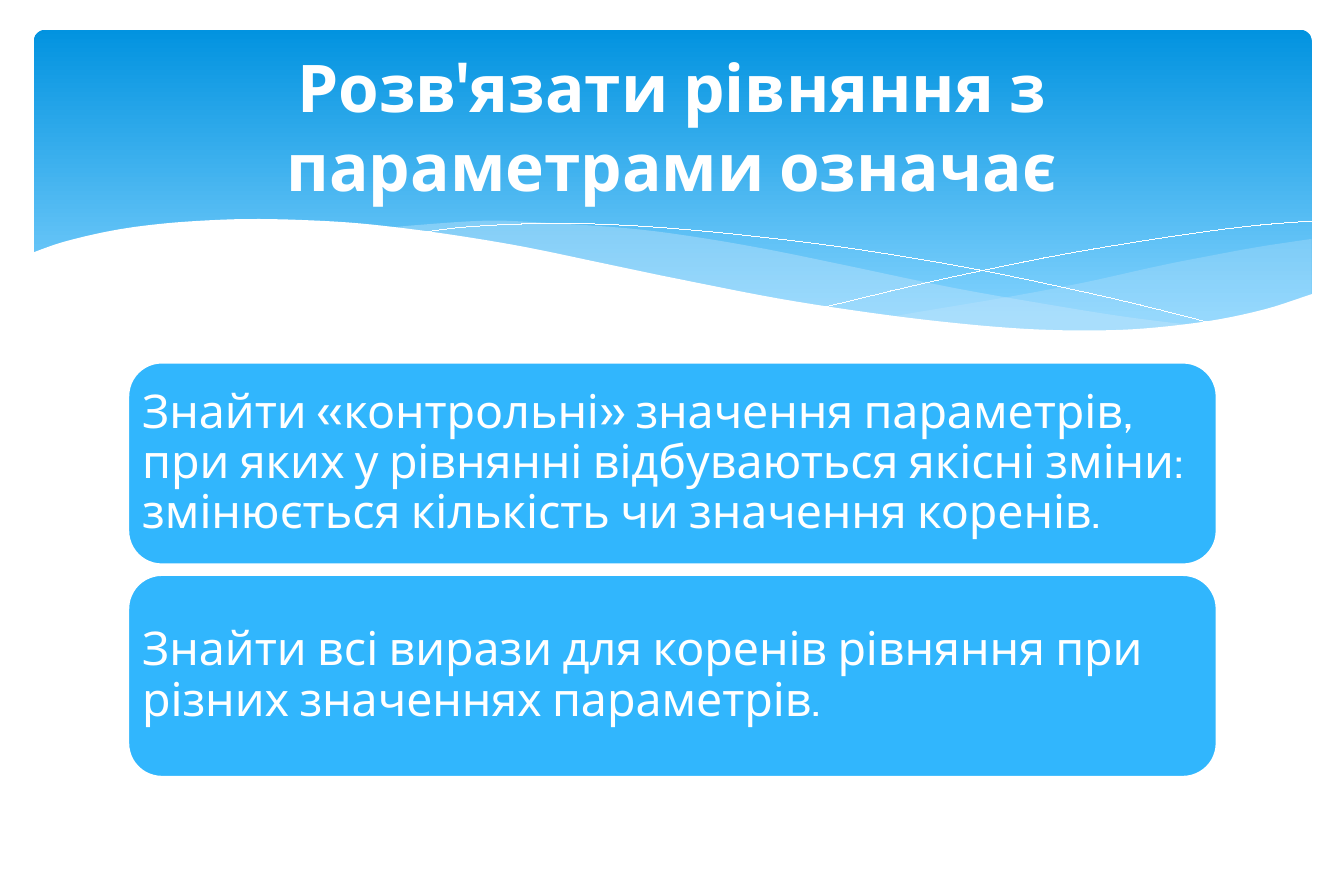
"""Build a slide with a waved title band and two statement cards."""
from lxml import etree
from pptx import Presentation
from pptx import util as u
from pptx.dml import color
from pptx.enum import shapes, text
from pptx.oxml import ns

Pt = u.Pt
COLOURS = {"sky": "0293E0", "pale": "83D3FE", "mist": "C6E7FC", "card": "31B6FD", "white": "FFFFFF"}
FONT = "Cabin"
TITLE = "Розв'язати рівняння з параметрами означає"
STATEMENTS = [
    "Знайти «контрольні» значення параметрів, при яких у рівнянні відбуваються якісні зміни: "
    "змінюється кількість чи значення коренів.",
    "Знайти всі вирази для коренів рівняння при різних значеннях параметрів.",
]

RIGHT_SWELL = [
    [(770, 126), (737, 131), (702, 137.5), (677, 142.5), (632, 152.5), (590, 160.5), (551.5, 167),
     (515.5, 173)],
    [(515.5, 173), (551, 177), (583, 180), (631, 182), (664, 181.5), (700, 178), (726, 173), (749, 167),
     (770, 160)],
]
LEFT_SWELL = [
    [(702.5, 178.5), (658, 173), (608, 165), (551.5, 155), (489.5, 142), (440.5, 132), (396.5, 124.5),
     (356.5, 119.5), (303, 116), (272, 115), (233, 117.5), (211.5, 119.5)],
    [(211.5, 119.5), (257, 125.5), (290, 131), (344, 142), (409, 155), (466.5, 165.5), (519, 173.5),
     (565, 179), (605.5, 181.5), (642, 182), (674.5, 181.5), (702.5, 178.5)],
]
FALLING_LINE = [
    [(230.5, 122.5), (258, 119), (294, 117), (330.5, 116.8), (376, 119), (430.5, 124), (494.5, 132),
     (569, 144.5), (653, 162.5), (715, 178)],
]
RISING_LINE = [
    [(476.5, 167), (543, 151.2), (608.5, 137.5), (657.5, 128.9), (705, 121.7), (739.5, 117.6),
     (769.7, 115.2)],
]
WHITE_WAVE = [
    [(771, 159), (741.5, 168.5), (708, 175.5), (669, 180), (635, 181.2), (597, 180.2), (553, 176.5),
     (504, 170.5), (449, 162), (387.5, 150), (342, 140.5), (296.5, 131), (255, 124), (216.5, 118.8),
     (182, 115.6), (136, 114), (98, 115.2), (66, 118.1), (41, 122.2), (16.5, 128.2), (-1.4, 134.5)],
    [(-1.4, 219), (771, 219)],
]


def rgb(name):
    """Return the named colour."""
    return color.RGBColor.from_string(COLOURS[name])


def apply(target, formats):
    """Set each format value on the target."""
    for name, value in formats.items():
        setattr(target, name, value)


def mirror(end, inner):
    """Return the inner knot reflected through the end knot."""
    return tuple(2 * a - b for a, b in zip(end, inner))


def smooth(knots, steps=5):
    """Return points on a smooth curve through the knots."""
    padded = [mirror(knots[0], knots[1]), *knots, mirror(knots[-1], knots[-2])]
    points = [knots[0]]
    for before, start, end, after in zip(padded, padded[1:], padded[2:], padded[3:]):
        for step in range(1, steps + 1):
            t = step / steps
            points.append(tuple(
                (2 * b + (c - a) * t + (2 * a - 5 * b + 4 * c - d) * t ** 2
                 + (3 * b - a - 3 * c + d) * t ** 3) / 2
                for a, b, c, d in zip(before, start, end, after)))
    return points


def add_wave(page, box, curves, fill=None, opacity=100):
    """Draw a filled wave, or a white hairline when no fill is given."""
    left, top = box[:2]
    points = [(Pt(left + x), Pt(top + y))
              for curve in curves
              for x, y in (smooth(curve) if len(curve) > 2 else curve)]
    builder = page.shapes.build_freeform(*points[0], scale=1)
    builder.add_line_segments(points[1:], close=fill is not None)
    wave = builder.convert_to_shape()
    wave.shadow.inherit = False
    if fill is None:
        wave.fill.background()
        wave.line.color.rgb = rgb("white")
        next(wave.element.iter(ns.qn("a:ln"))).set("w", "0")
        return
    wave.fill.solid()
    wave.fill.fore_color.rgb = rgb(fill)
    wave.line.fill.background()
    if opacity < 100:
        paint = next(wave.element.iter(ns.qn("a:srgbClr")))
        etree.SubElement(paint, ns.qn("a:alpha")).set("val", str(opacity * 1000))


def add_band(page, box):
    """Draw the gradient band and its waves."""
    band = page.shapes.add_shape(shapes.MSO_SHAPE.ROUNDED_RECTANGLE, *map(Pt, box))
    band.adjustments[0] = 0.034
    band.shadow.inherit = False
    band.line.fill.background()
    band.fill.gradient()
    band.fill.gradient_angle = 270
    for stop, name, position in zip(band.fill.gradient_stops, ("sky", "pale"), (0, 0.9)):
        stop.color.rgb = rgb(name)
        stop.position = position
    add_wave(page, box, RIGHT_SWELL, "mist", 29)
    add_wave(page, box, LEFT_SWELL, "mist", 40)
    add_wave(page, box, FALLING_LINE)
    add_wave(page, box, RISING_LINE)
    add_wave(page, box, WHITE_WAVE, "white")


def write(frame, words, frame_formats, para_formats, font_formats):
    """Write one white paragraph into a text frame."""
    apply(frame, {"word_wrap": True, "auto_size": text.MSO_AUTO_SIZE.NONE,
                  "vertical_anchor": text.MSO_ANCHOR.MIDDLE, **frame_formats})
    para = frame.paragraphs[0]
    apply(para, para_formats)
    span = para.add_run()
    span.text = words
    apply(span.font, {"name": FONT, **font_formats})
    span.font.color.rgb = rgb("white")


def add_title(page, box):
    """Place the title in front of the band."""
    title = page.shapes.title
    apply(title, dict(zip(("left", "top", "width", "height"), map(Pt, box))))
    write(title.text_frame, TITLE, {}, {"alignment": text.PP_ALIGN.CENTER},
          {"size": Pt(39.6), "bold": True})
    page.shapes.element.append(title.element)


def add_cards(page, box, gap=6.3):
    """Stack one rounded card for each statement."""
    left, top, width, height = box
    card_height = (height - gap * (len(STATEMENTS) - 1)) / len(STATEMENTS)
    margins = {"margin_left": Pt(2.5), "margin_right": Pt(2.5),
               "margin_top": Pt(2.5), "margin_bottom": Pt(2.5)}
    for index, words in enumerate(STATEMENTS):
        card = page.shapes.add_shape(
            shapes.MSO_SHAPE.ROUNDED_RECTANGLE, Pt(left), Pt(top + index * (card_height + gap)),
            Pt(width), Pt(card_height))
        card.shadow.inherit = False
        card.fill.solid()
        card.fill.fore_color.rgb = rgb("card")
        card.line.color.rgb = rgb("white")
        card.line.width = Pt(1.25)
        write(card.text_frame, words, margins,
              {"alignment": text.PP_ALIGN.LEFT, "line_spacing": 0.9, "space_after": Pt(9.8)},
              {"size": Pt(28)})


def main():
    """Build and save the deck."""
    deck = Presentation()
    apply(deck, {"slide_width": Pt(810), "slide_height": Pt(540)})
    page = deck.slides.add_slide(deck.slide_layouts[5])
    add_band(page, (20.5, 18, 770, 194.4))
    add_cards(page, (77.3, 218.5, 656, 249.7))
    add_title(page, (40.5, 26.5, 728.5, 98.5))
    deck.save("out.pptx")


if __name__ == "__main__":
    main()
